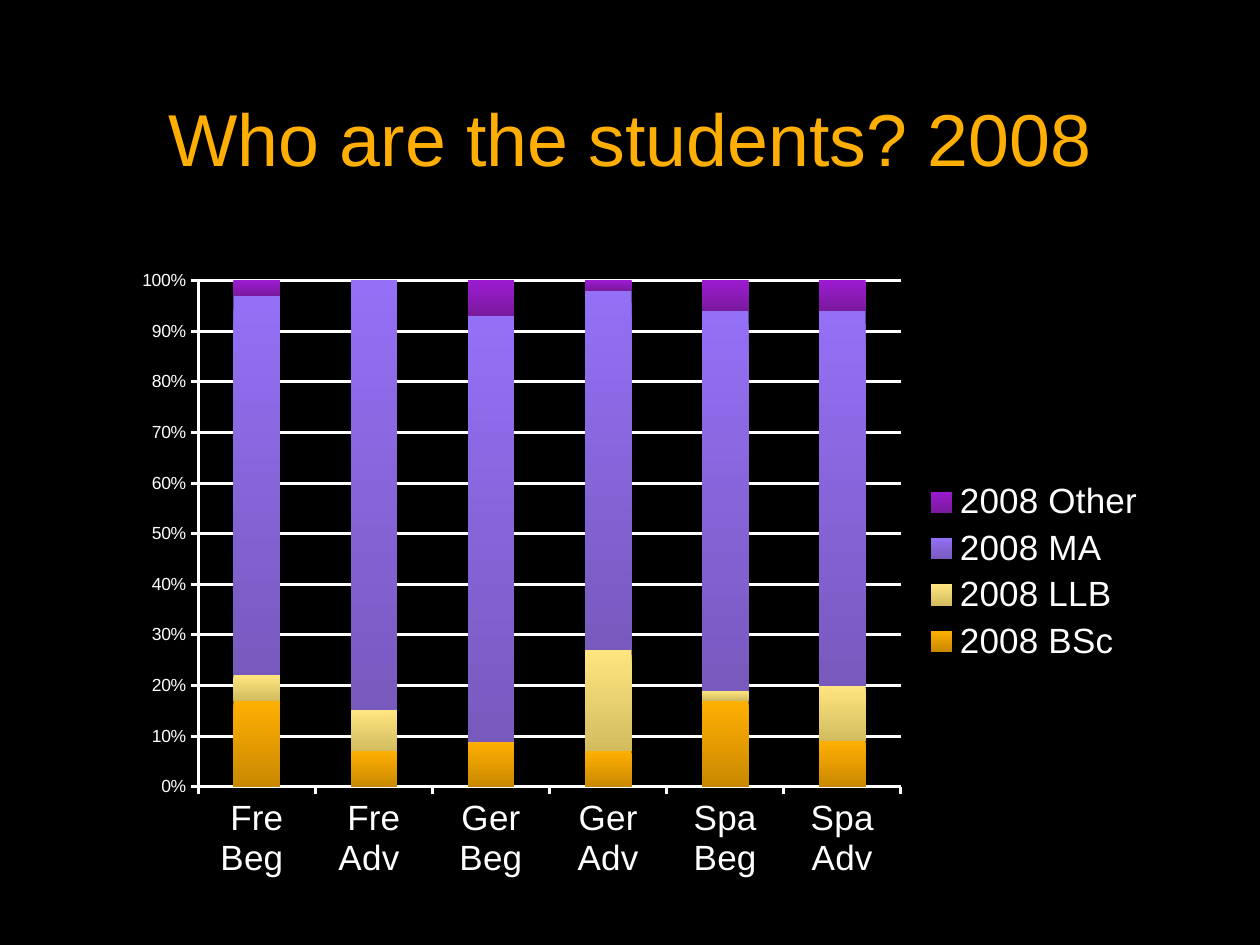
from dataclasses import dataclass

from lxml import etree
from pptx import Presentation
from pptx.chart.data import CategoryChartData
from pptx.dml.color import RGBColor
from pptx.enum.chart import XL_CHART_TYPE, XL_LEGEND_POSITION, XL_TICK_MARK
from pptx.enum.text import MSO_ANCHOR, PP_ALIGN
from pptx.oxml.ns import qn
from pptx.util import Inches, Pt


@dataclass(frozen=True)
class Theme:
    font: str = "Arial"
    background: str = "000000"
    title: str = "FFAF03"
    text: str = "FFFFFF"
    title_size: int = 42
    label_size: int = 20
    scale_size: int = 10
    line_width: float = 1.75


THEME = Theme()
WIDTH, HEIGHT = Inches(10), Inches(7.5)
COURSES = ["Fre Beg ", "Fre Adv ", "Ger Beg", "Ger Adv", "Spa Beg", "Spa Adv"]
# Degree: shares per course, gradient from top to bottom
DEGREES = {
    "2008 BSc": ([17, 7, 9, 7, 17, 9], ("FFAF03", "C98800")),
    "2008 LLB": ([5, 8, 0, 20, 2, 11], ("FFE580", "D2BC5E")),
    "2008 MA": ([75, 84, 85, 71, 75, 74], ("9370F5", "785ABE")),
    "2008 Other": ([3, 0, 7, 2, 6, 6], ("9C1BD0", "7A1A9E")),
}


def rgb(color):
    return RGBColor.from_string(color)


def share_box(left, top, width, height):
    """Turn shares of the slide into lengths."""
    return (int(WIDTH * left), int(HEIGHT * top),
            int(WIDTH * width), int(HEIGHT * height))


def style_font(font, size, color):
    font.name = THEME.font
    font.size = Pt(size)
    font.color.rgb = rgb(color)


def style_line(line):
    line.color.rgb = rgb(THEME.text)
    line.width = Pt(THEME.line_width)


def add_title(slide, box, text):
    frame = slide.shapes.add_textbox(*box).text_frame
    frame.word_wrap = True
    frame.vertical_anchor = MSO_ANCHOR.MIDDLE
    heading = frame.paragraphs[0]
    heading.text = text
    heading.alignment = PP_ALIGN.CENTER
    style_font(heading.font, THEME.title_size, THEME.title)


def fix_plot_area(chart, **shares):
    """Place the inner plot area at shares x, y, w, h of the chart."""
    plot_area = chart.plots[0]._element.getparent()
    for old in plot_area.findall(qn("c:layout")):
        plot_area.remove(old)
    layout = etree.Element(qn("c:layout"))
    manual = etree.SubElement(layout, qn("c:manualLayout"))
    settings = {"layoutTarget": "inner", "xMode": "edge", "yMode": "edge", **shares}
    for tag, value in settings.items():
        etree.SubElement(manual, qn(f"c:{tag}")).set("val", str(value))
    plot_area.insert(0, layout)


def style_axes(chart):
    courses, scale = chart.category_axis, chart.value_axis
    for axis, size in ((courses, THEME.label_size), (scale, THEME.scale_size)):
        axis.major_tick_mark = XL_TICK_MARK.OUTSIDE
        style_font(axis.tick_labels.font, size, THEME.text)
        style_line(axis.format.line)
    scale.minimum_scale, scale.maximum_scale, scale.major_unit = 0, 1, 0.1
    scale.tick_labels.number_format = "0%"
    scale.tick_labels.number_format_is_linked = False
    style_line(scale.major_gridlines.format.line)


def add_degree_chart(slide, box):
    data = CategoryChartData()
    data.categories = COURSES
    for degree, (shares, _) in DEGREES.items():
        data.add_series(degree, shares)
    chart = slide.shapes.add_chart(
        XL_CHART_TYPE.COLUMN_STACKED_100, *box, data).chart
    chart.has_title = False
    style_font(chart.font, THEME.scale_size, THEME.text)
    style_axes(chart)

    plot = chart.plots[0]
    plot.gap_width, plot.overlap, plot.vary_by_categories = 150, 100, False
    for series, (_, gradient) in zip(plot.series, DEGREES.values()):
        fill = series.format.fill
        fill.gradient()
        fill.gradient_angle = 270
        for stop, color in zip(fill.gradient_stops, gradient):
            stop.color.rgb = rgb(color)

    chart.has_legend = True
    chart.legend.position = XL_LEGEND_POSITION.RIGHT
    chart.legend.include_in_layout = False
    style_font(chart.legend.font, THEME.label_size, THEME.text)
    fix_plot_area(chart, x=0.07, y=0.04, w=0.68, h=0.8)


def main():
    deck = Presentation()
    deck.slide_width, deck.slide_height = WIDTH, HEIGHT
    slide = deck.slides.add_slide(deck.slide_layouts[6])
    slide.background.fill.solid()
    slide.background.fill.fore_color.rgb = rgb(THEME.background)
    add_title(slide, share_box(0.07, 0.09, 0.86, 0.11), "Who are the students? 2008")
    add_degree_chart(slide, share_box(0.1, 0.27, 0.82, 0.67))
    deck.save("out.pptx")


if __name__ == "__main__":
    main()
